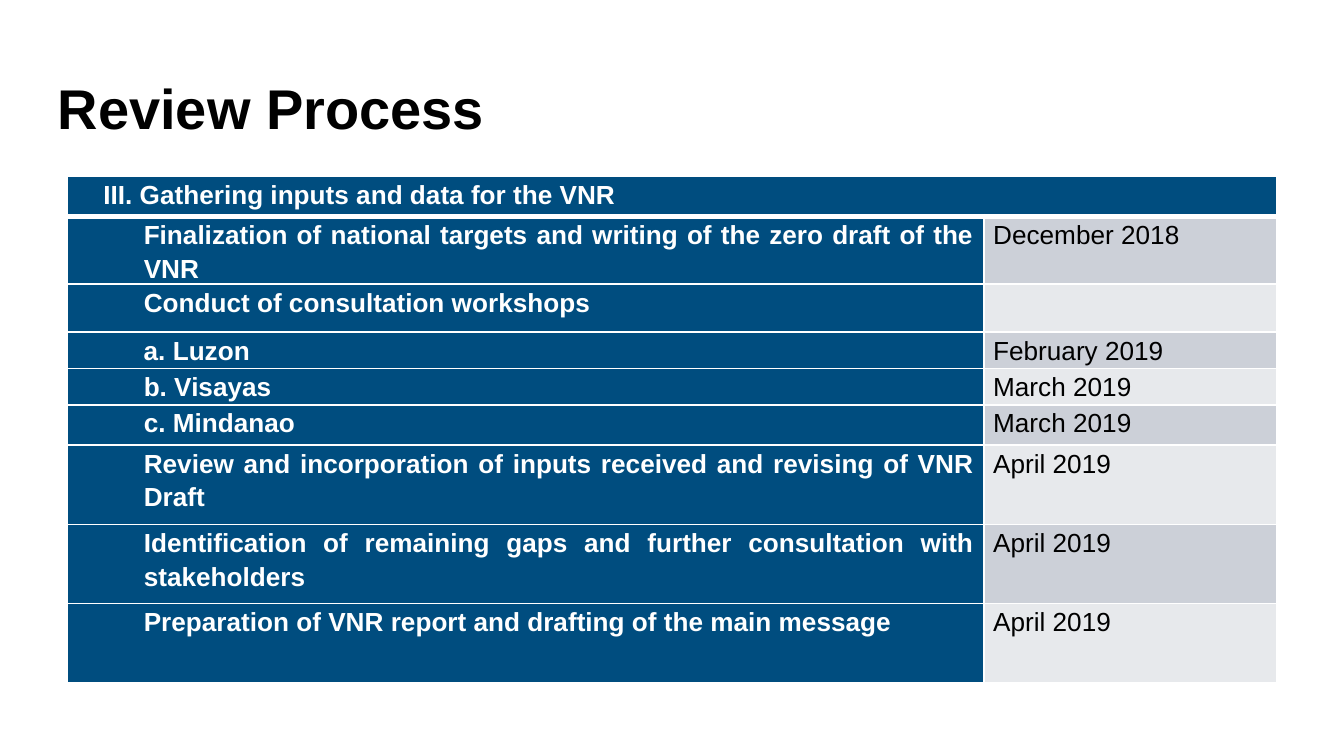
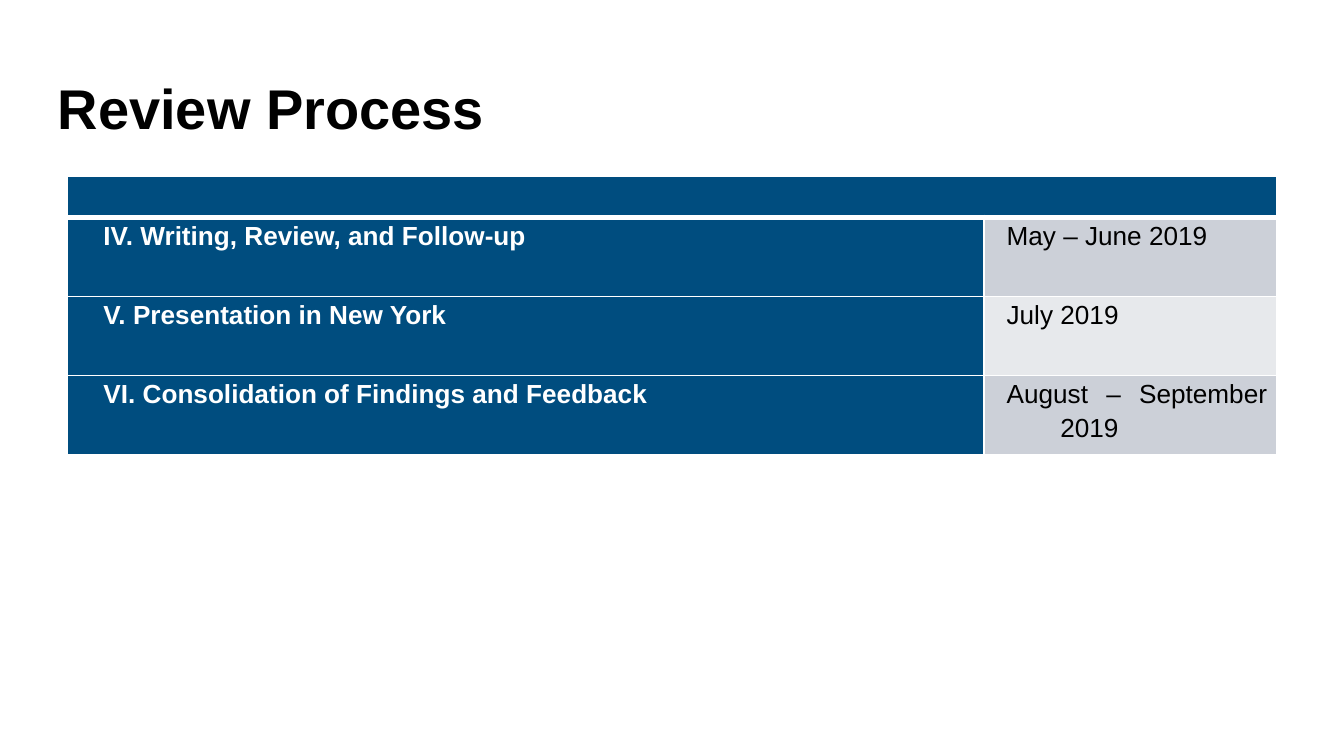
from pptx import Presentation
from pptx.dml.color import RGBColor
from pptx.enum.text import MSO_ANCHOR, PP_ALIGN
from pptx.oxml import parse_xml
from pptx.oxml.ns import nsdecls
from pptx.util import Inches, Pt

COLORS = {"blue": "004D7F", "grey": "CCD0D8", "pale": "E7E9EC",
          "white": "FFFFFF", "black": "000000"}
FONT = "Arial"
SLIDE_WIDTH = Inches(10)
SLIDE_HEIGHT = SLIDE_WIDTH * 9 // 16
COLUMN_WIDTHS = (6.82, 2.18)
HEADER_HEIGHT = 0.3

# Paragraph styles: left margin, first-line indent, level, alignment
STYLES = {
    "stage": (0.5, -0.3, 0, PP_ALIGN.JUSTIFY),
    "step": (0.5, 0, 0, PP_ALIGN.JUSTIFY),
    "left step": (0.5, 0, 0, PP_ALIGN.LEFT),
    "place": (0.5, 0, 1, PP_ALIGN.JUSTIFY),
    "lettered place": (0.5, 0, 1, PP_ALIGN.JUSTIFY),
    "date": (0, 0, 0, PP_ALIGN.JUSTIFY),
    "hanging date": (0.5, -0.4, 0, PP_ALIGN.JUSTIFY),
}

# Each row: activity, its style, date, row height
SLIDES = [
    {"title": "Review Process",
     "header": "III. Gathering inputs and data for the VNR",
     "date_style": "date",
     "rows": [
         ("Finalization of national targets and writing of the zero draft of the VNR",
          "step", "December 2018", 0.28),
         ("Conduct of consultation workshops", "left step", "", 0.36),
         (" Luzon", "lettered place", "February 2019", 0.27),
         ("b. Visayas", "place", "March 2019", 0.27),
         ("c. Mindanao", "place", "March 2019", 0.3),
         ("Review and incorporation of inputs received and revising of VNR Draft",
          "step", "April 2019", 0.59),
         ("Identification of remaining gaps and further consultation with stakeholders",
          "step", "April 2019", 0.59),
         ("Preparation of VNR report and drafting of the main message",
          "step", "April 2019", 0.59),
     ]},
    {"title": "Review Process",
     "header": "",
     "date_style": "hanging date",
     "rows": [
         ("IV. Writing, Review, and Follow-up", "stage", "May – June 2019", 0.59),
         ("V. Presentation in New York", "stage", "July 2019", 0.59),
         ("VI. Consolidation of Findings and Feedback", "stage",
          "August – September 2019", 0.59),
     ]},
]


def set_font(paragraph, size, color, bold):
    font = paragraph.font
    font.name, font.size, font.bold = FONT, Pt(size), bold
    font.color.rgb = RGBColor.from_string(COLORS[color])


def set_borders(cell, top=1, bottom=1):
    """White rules around a cell, widths in points."""
    sides = (("lnL", 1), ("lnR", 1), ("lnT", top), ("lnB", bottom))
    for index, (side, width) in enumerate(sides):
        cell._tc.get_or_add_tcPr().insert(index, parse_xml(
            f'<a:{side} {nsdecls("a")} w="{Pt(width)}"><a:solidFill>'
            f'<a:srgbClr val="{COLORS["white"]}"/></a:solidFill></a:{side}>'))


def fill_cell(cell, text, style, fill, color, bold, top=1, bottom=1):
    cell.fill.solid()
    cell.fill.fore_color.rgb = RGBColor.from_string(COLORS[fill])
    cell.margin_left = cell.margin_right = Inches(0.07)
    cell.margin_top = cell.margin_bottom = 0
    set_borders(cell, top, bottom)
    if not text:
        return
    margin, indent, level, alignment = STYLES[style]
    cell.text = text
    paragraph = cell.text_frame.paragraphs[0]
    paragraph.level, paragraph.alignment = level, alignment
    paragraph.line_spacing = 1.15
    properties = paragraph._p.get_or_add_pPr()
    properties.set("marL", str(Inches(margin)))
    properties.set("indent", str(Inches(indent)))
    if style == "lettered place":
        properties.append(parse_xml(
            f'<a:buAutoNum {nsdecls("a")} type="alphaLcPeriod"/>'))
    set_font(paragraph, 14, color, bold)


def add_title(slide, text):
    title = slide.shapes.title
    title.left, title.top = Inches(0.33), Inches(0.19)
    title.width, title.height = Inches(8.5), Inches(1.21)
    title.text_frame.text = text
    title.text_frame.vertical_anchor = MSO_ANCHOR.MIDDLE
    heading = title.text_frame.paragraphs[0]
    heading.alignment = PP_ALIGN.LEFT
    set_font(heading, 30, "black", True)


def add_schedule(slide, content):
    rows = content["rows"]
    heights = [HEADER_HEIGHT] + [row[3] for row in rows]
    schedule = slide.shapes.add_table(
        len(heights), len(COLUMN_WIDTHS), Inches(0.5), Inches(1.31),
        Inches(sum(COLUMN_WIDTHS)), Inches(sum(heights))).table
    for column, width in zip(schedule.columns, COLUMN_WIDTHS):
        column.width = Inches(width)
    for row, height in zip(schedule.rows, heights):
        row.height = Inches(height)

    # Header band across both columns
    schedule.cell(0, 0).merge(schedule.cell(0, 1))
    for column, text in enumerate((content["header"], "")):
        fill_cell(schedule.cell(0, column), text, "stage", "blue", "white",
                  True, bottom=3)

    # Activities with alternating date cells
    for number, (activity, style, date, _) in enumerate(rows, start=1):
        top = 3 if number == 1 else 1
        fill_cell(schedule.cell(number, 0), activity, style,
                  "blue", "white", True, top)
        fill_cell(schedule.cell(number, 1), date, content["date_style"],
                  "grey" if number % 2 else "pale", "black", False, top)


def main():
    deck = Presentation()
    deck.slide_width, deck.slide_height = SLIDE_WIDTH, SLIDE_HEIGHT
    for content in SLIDES:
        slide = deck.slides.add_slide(deck.slide_layouts[5])
        add_title(slide, content["title"])
        add_schedule(slide, content)
    deck.save("out.pptx")


if __name__ == "__main__":
    main()
